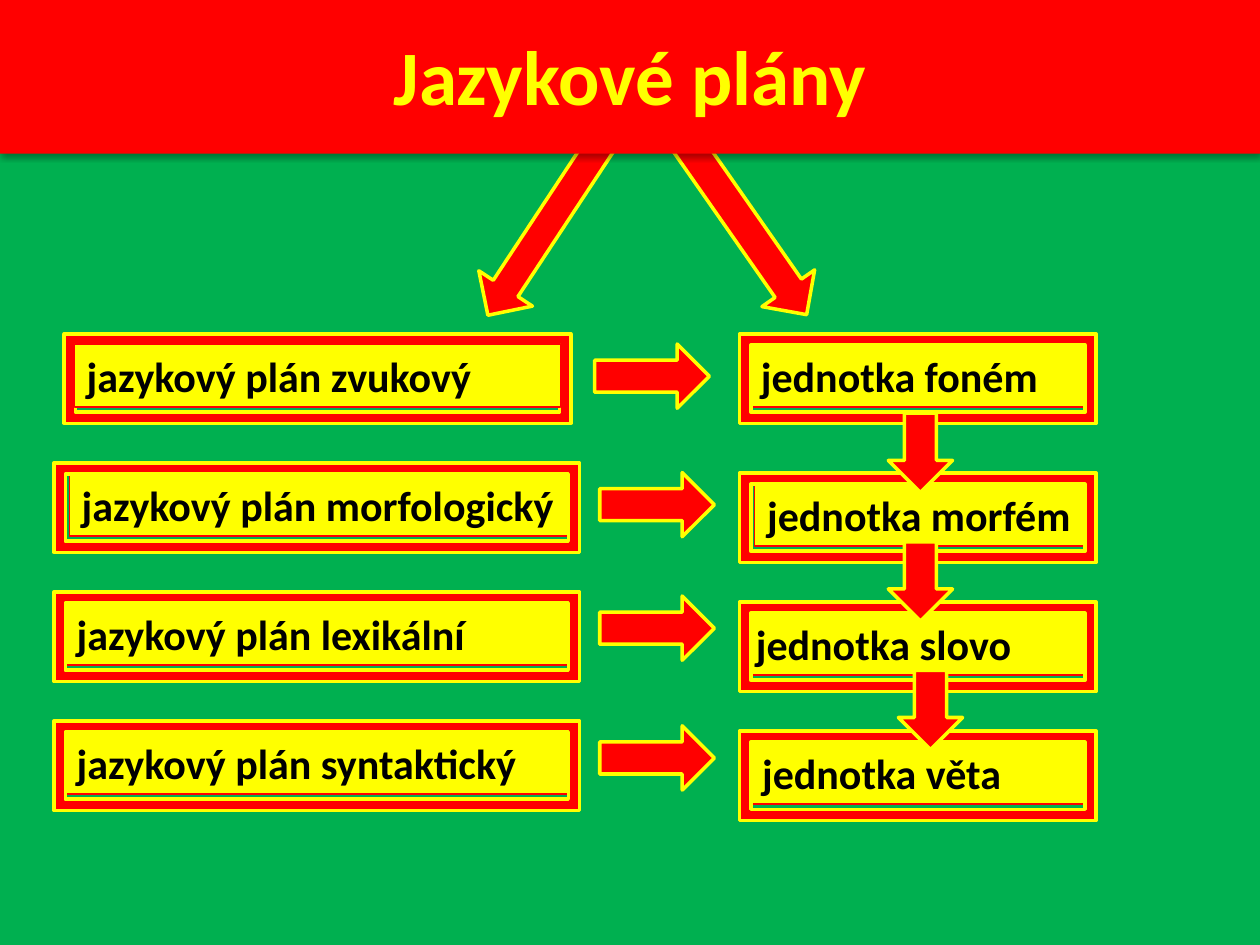
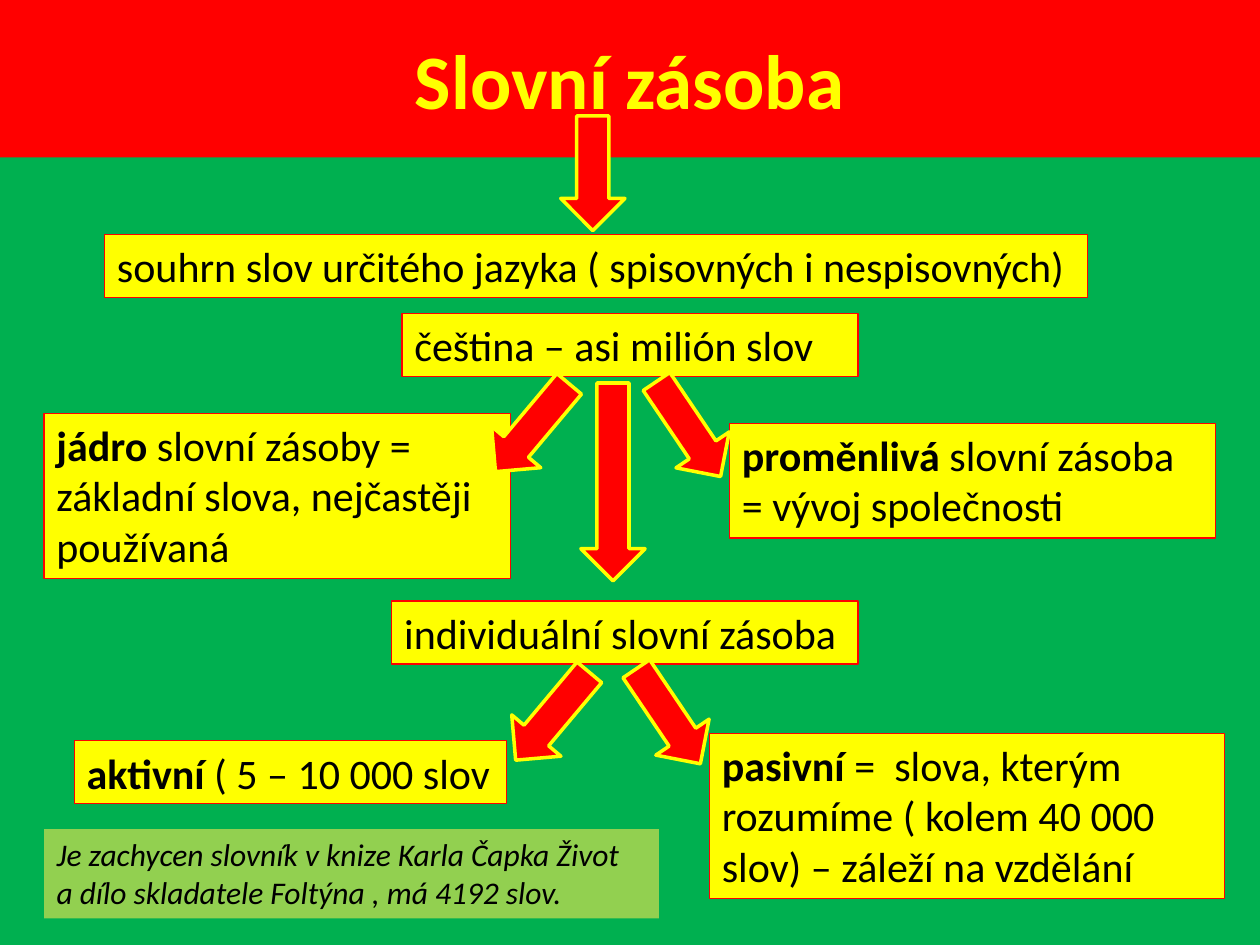
from dataclasses import dataclass
from lxml import etree
from pptx import Presentation
from pptx.dml.color import RGBColor
from pptx.enum import shapes, text
from pptx.oxml.ns import qn
from pptx.util import Inches, Length, Pt

HUES = {"green": "00B050", "red": "FF0000", "yellow": "FFFF00",
        "black": "000000", "lime": "92D050"}
FACE = "Calibri"
COLS, ROWS = 100, 75
WIDE, HIGH = Inches(10), Inches(7.5)
PITCH = 10.24
THIN, BOLD = 0.75, 2


@dataclass
class Spot:
    col: float
    row: float
    cols: float
    rows: float

    def place(self) -> tuple[Length, ...]:
        x, y = WIDE / COLS, HIGH / ROWS
        return tuple(Length(round(n)) for n in
                     (self.col * x, self.row * y, self.cols * x, self.rows * y))


@dataclass
class Arrow:
    col: float
    row: float
    rows: float = 9.1
    turn: float = 0
    shaft: float = 0.5


@dataclass
class Label:
    spot: Spot
    lead: str = ""
    rest: str = ""
    wrap: bool = True
    size: int = 24
    fill: str = "yellow"
    edge: str = "red"
    slant: bool = False


@dataclass
class Level:
    plan: str
    plate: Spot
    frame: Spot
    unit: str
    inset: float
    link: Arrow
    front: bool = False
    wrap: bool = True


def hue(name: str) -> RGBColor:
    return RGBColor.from_string(HUES[name])


def paint(shape, fill: str, edge: str = "", width: float = THIN) -> None:
    shape.fill.solid()
    shape.fill.fore_color.rgb = hue(fill)
    if edge:
        shape.line.color.rgb = hue(edge)
        shape.line.width = Pt(width)
    else:
        shape.line.fill.background()


def style(para, size: int, name: str, bold: bool = False, slant: bool = False) -> None:
    font = para.font
    font.name, font.size = FACE, Pt(size)
    font.bold, font.italic = bold, slant
    font.color.rgb = hue(name)


def start(deck, words: str, row: float = 0):
    slide = deck.slides.add_slide(deck.slide_layouts[5])
    slide.background.fill.solid()
    slide.background.fill.fore_color.rgb = hue("green")
    title = slide.shapes.title
    title.left, title.top, title.width, title.height = Spot(0, row, COLS, 12.5).place()
    paint(title, "red")
    title.text_frame.text = words
    title.text_frame.vertical_anchor = text.MSO_ANCHOR.MIDDLE
    para = title.text_frame.paragraphs[0]
    para.alignment = text.PP_ALIGN.CENTER
    style(para, 44, "yellow", True)
    return slide


def shade(shape) -> None:
    group = etree.SubElement(shape.element.spPr, qn("a:effectLst"))
    cast = etree.SubElement(group, qn("a:outerShdw"), blurRad="40000",
                            dist="23000", dir="5400000", rotWithShape="0")
    tone = etree.SubElement(cast, qn("a:srgbClr"), val=HUES["black"])
    etree.SubElement(tone, qn("a:alpha"), val="35000")


def solid(slide, kind, spot: Spot):
    shape = slide.shapes.add_shape(kind, *spot.place())
    shape.shadow.inherit = False
    paint(shape, "red", "yellow", BOLD)
    return shape


def point(slide, arrow: Arrow) -> None:
    spot = Spot(arrow.col, arrow.row, 5.1, arrow.rows)
    shape = solid(slide, shapes.MSO_SHAPE.DOWN_ARROW, spot)
    shape.adjustments[0] = arrow.shaft
    shape.rotation = arrow.turn


def write(slide, label: Label) -> None:
    box = slide.shapes.add_textbox(*label.spot.place())
    paint(box, label.fill, label.edge)
    frame = box.text_frame
    frame.word_wrap = label.wrap
    frame.auto_size = text.MSO_AUTO_SIZE.SHAPE_TO_FIT_TEXT
    para = frame.paragraphs[0]
    style(para, label.size, "black", not label.rest, label.slant)
    for words, bold in ((label.lead, True), (label.rest, False)):
        if words:
            run = para.add_run()
            run.text = words
            run.font.bold = bold


def border(slide, spot: Spot) -> None:
    solid(slide, shapes.MSO_SHAPE.FRAME, spot)


def plans(deck) -> None:
    slide = start(deck, "Jazykové plány", -0.3)
    title = slide.shapes.title
    point(slide, Arrow(41.1, 8.6, 17.9, 33.4, 0.461))
    point(slide, Arrow(56.3, 8.5, 18.1, 325.1))
    shade(title)
    title.element.getparent().append(title.element)

    tops = [26.5 + PITCH * i for i in range(4)]
    names = [("zvukový", "foném", 5.9, 38.6, 59.4, 49.2, 25.3),
             ("morfologický", "morfém", 5.5, 39.8, 59.9, 49.6, 35.5),
             ("lexikální", "slovo", 5.1, 40.2, 59, 49.6, 45.3),
             ("syntaktický", "věta", 5.1, 40.2, 59.5, 49.6, 55.6)]
    for i, (top, name) in enumerate(zip(tops, names)):
        plan, unit, left, wide, inset, link, row = name
        first = i == 0
        frame = Spot(5.1, top, 40.2, 7.1) if first else Spot(4.3, top, 41.7, 7.1)
        level = Level(f"jazykový plán {plan}", Spot(left, top + 0.8, wide, 5), frame,
                      f"jednotka {unit}", inset, Arrow(link, row, turn=270),
                      first, unit != "morfém")
        side = top if first else top + 0.8
        if level.front:
            border(slide, level.frame)
        write(slide, Label(level.plate, level.plan))
        if not level.front:
            border(slide, level.frame)
        spot = Spot(level.inset, side + 0.8, 86.2 - level.inset, 5)
        write(slide, Label(spot, level.unit, wrap=level.wrap))
        border(slide, Spot(58.7, side, 28.3, 7.1))
        point(slide, level.link)
    for i, col in enumerate((70.5, 70.5, 71.3)):
        point(slide, Arrow(col, 32.8 + 10.2 * i, 6.3))


def words(deck) -> None:
    slide = start(deck, "Slovní zásoba")
    for label in (
        Label(Spot(8.3, 18.6, 78, 5),
              rest="souhrn slov určitého jazyka ( spisovných i nespisovných)"),
        Label(Spot(31.9, 24.9, 36.2, 5), rest="čeština – asi milión slov"),
        Label(Spot(3.5, 32.8, 37, 13.1), "jádro",
              " slovní zásoby = základní slova, nejčastěji používaná"),
        Label(Spot(31.1, 47.7, 37, 5), rest="individuální slovní zásoba"),
        Label(Spot(57.9, 33.6, 38.6, 9.1), "proměnlivá",
              " slovní zásoba  = vývoj společnosti"),
        Label(Spot(56.3, 58.2, 40.9, 13.1), "pasivní",
              " =  slova, kterým rozumíme ( kolem 40 000 slov) – záleží na vzdělání"),
        Label(Spot(5.9, 58.8, 34.3, 5), "aktivní ", "( 5 – 10 000 slov", wrap=False),
        Label(Spot(3.5, 65.8, 48.8, 7.1),
              rest="Je zachycen slovník v knize Karla Čapka Život  a dílo skladatele "
                   "Foltýna , má 4192 slov.",
              size=18, fill="lime", edge="", slant=True),
    ):
        write(slide, label)
    for arrow in (Arrow(44.5, 9.2), Arrow(39.7, 29.4, turn=40),
                  Arrow(52.1, 29.5, turn=326), Arrow(46.1, 30.4, 15.7),
                  Arrow(50.5, 52.3, turn=326), Arrow(41.3, 52.3, turn=40)):
        point(slide, arrow)


def main() -> None:
    deck = Presentation()
    deck.slide_width, deck.slide_height = WIDE, HIGH
    plans(deck)
    words(deck)
    deck.save("out.pptx")


if __name__ == "__main__":
    main()
